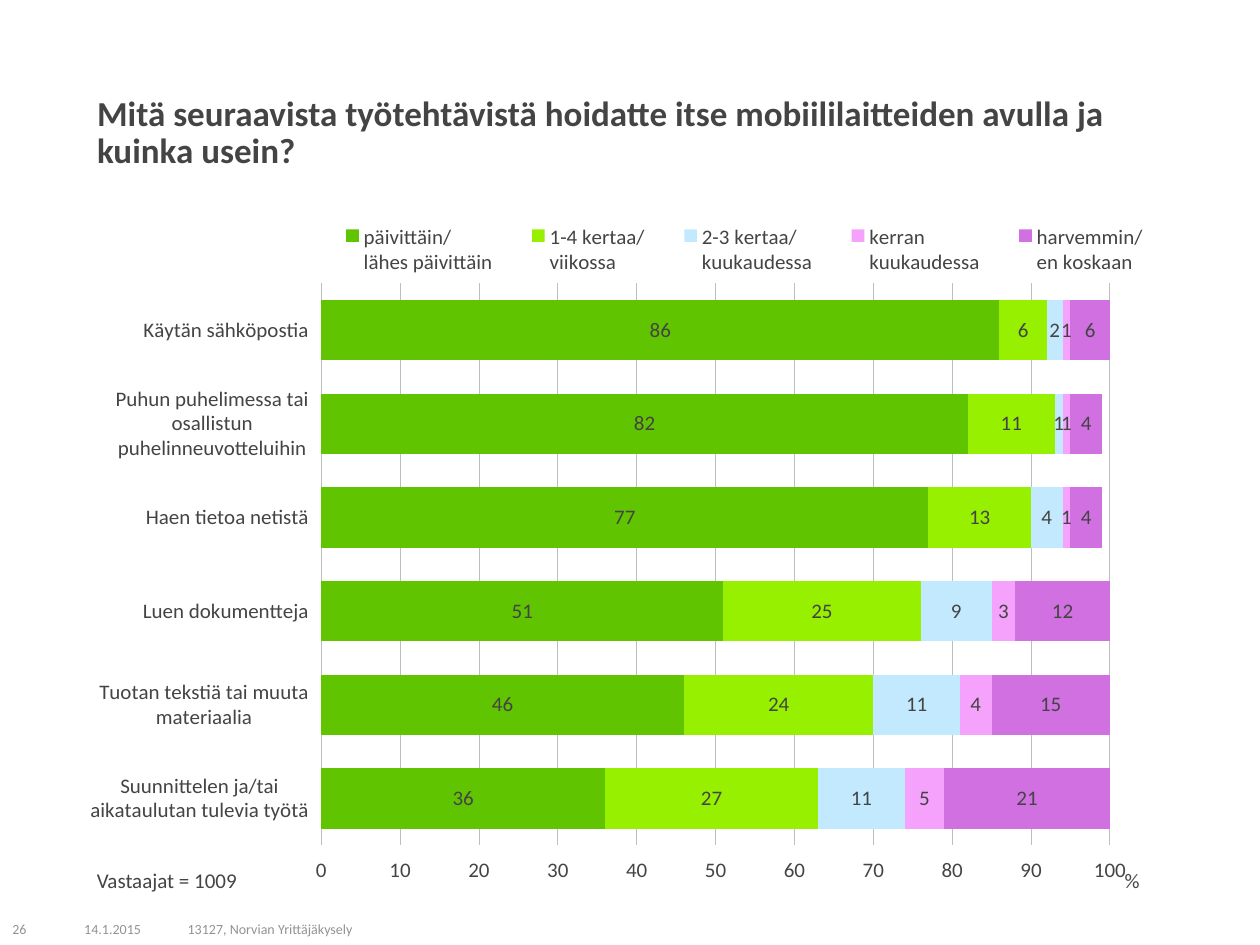
from dataclasses import dataclass

import pptx
import pptx.chart.data
import pptx.dml.color
import pptx.enum.chart
import pptx.enum.text
import pptx.oxml
import pptx.oxml.ns
import pptx.util

FONT = "Calibri"
DARK, GREY, GRID = "444444", "939393", "BCBEC0"
COLS, ROWS = 100, 75
WIDE, HIGH = pptx.util.Inches(10), pptx.util.Inches(7.5)


@dataclass
class Spot:
    """Place on the slide, in columns and rows of the grid."""
    col: float
    row: float
    cols: float
    rows: float

    def box(self) -> tuple:
        return (round(self.col * WIDE / COLS), round(self.row * HIGH / ROWS),
                round(self.cols * WIDE / COLS), round(self.rows * HIGH / ROWS))


@dataclass
class Note:
    text: str
    spot: Spot
    size: float
    hue: str
    mid: bool = False
    bold: bool = False
    gap: float = 1.0


@dataclass
class Band:
    name: str
    hue: str
    vals: tuple


TITLE = Note("Mitä seuraavista työtehtävistä hoidatte itse mobiililaitteiden "
             "avulla ja kuinka usein?",
             Spot(6.7, 7.1, 86.6, 6.3), 20, DARK, bold=True, gap=0.9)
NOTES = [
    Note("14.1.2015", Spot(5.7, 72.5, 8.2, 2.5), 8, GREY, mid=True),
    Note("13127, Norvian Yrittäjäkysely", Spot(13.9, 72.5, 33.1, 2.5), 8, GREY, mid=True),
    Note("26", Spot(0, 72.5, 4.5, 2.5), 8, GREY, mid=True),
    Note("Vastaajat = 1009", Spot(6.7, 68.6, 27.7, 2.8), 12, DARK, gap=0.9),
]
CHART = Spot(6.7, 16.6, 86.6, 54.8)
TASKS = [
    "Käytän sähköpostia",
    "Puhun puhelimessa tai osallistun puhelinneuvotteluihin",
    "Haen tietoa netistä",
    "Luen dokumentteja",
    "Tuotan tekstiä tai muuta materiaalia",
    "Suunnittelen ja/tai aikataulutan tulevia työtä",
]
BANDS = [
    Band("päivittäin/\nlähes päivittäin", "60C400", (86, 82, 77, 51, 46, 36)),
    Band("1-4 kertaa/\nviikossa", "96F000", (6, 11, 13, 25, 24, 27)),
    Band("2-3 kertaa/\nkuukaudessa", "C2E9FE", (2, 1, 4, 9, 11, 11)),
    Band("kerran\nkuukaudessa", "F5A2FD", (1, 1, 1, 3, 4, 5)),
    Band("harvemmin/\nen koskaan", "D070E1", (6, 4, 4, 12, 15, 21)),
]


def rgb(hue: str) -> pptx.dml.color.RGBColor:
    return pptx.dml.color.RGBColor.from_string(hue)


def style(font, size: float, hue: str, bold: bool = False) -> None:
    font.name, font.size, font.bold = FONT, pptx.util.Pt(size), bold
    font.color.rgb = rgb(hue)


def write(shape, note: Note) -> None:
    shape.left, shape.top, shape.width, shape.height = note.spot.box()
    frame = shape.text_frame
    frame.word_wrap = True
    frame.auto_size = pptx.enum.text.MSO_AUTO_SIZE.NONE
    anchor = pptx.enum.text.MSO_ANCHOR
    frame.vertical_anchor = anchor.MIDDLE if note.mid else anchor.TOP
    para = frame.paragraphs[0]
    para.alignment = pptx.enum.text.PP_ALIGN.LEFT
    para.line_spacing = note.gap
    run = para.add_run()
    run.text = note.text
    style(run.font, note.size, note.hue, note.bold)


def pin(node, index: int, inner: bool = False, **share: float) -> None:
    """Fix a chart part at shares of the chart's size."""
    for old in node.findall(pptx.oxml.ns.qn("c:layout")):
        node.remove(old)
    tags = '<c:layoutTarget val="inner"/>' if inner else ""
    tags += "".join(f'<c:{key}Mode val="edge"/>' for key in "xy")
    tags += "".join(f'<c:{key} val="{val}"/>' for key, val in share.items())
    node.insert(index, pptx.oxml.parse_xml(
        f'<c:layout {pptx.oxml.ns.nsdecls("c")}>'
        f'<c:manualLayout>{tags}</c:manualLayout></c:layout>'))


def set_axes(chart) -> None:
    enum = pptx.enum.chart
    cat, val = chart.category_axis, chart.value_axis
    for axis in (cat, val):
        axis.major_tick_mark = axis.minor_tick_mark = enum.XL_TICK_MARK.NONE
        axis.format.line.fill.background()
        style(axis.tick_labels.font, 12, DARK)
    cat.reverse_order = True
    cat.tick_label_position = enum.XL_TICK_LABEL_POSITION.LOW
    cat.has_major_gridlines = False

    val.tick_label_position = enum.XL_TICK_LABEL_POSITION.HIGH
    val.minimum_scale, val.maximum_scale, val.major_unit = 0, 100.01, 10
    val.tick_labels.number_format = "General"
    val.tick_labels.number_format_is_linked = False
    val.has_major_gridlines = True
    line = val.major_gridlines.format.line
    line.color.rgb, line.width = rgb(GRID), pptx.util.Pt(0.5)
    run = val.axis_title.text_frame.paragraphs[0].add_run()
    run.text = "%"
    style(run.font, 12, DARK)
    pin(val.axis_title._element, 1, x=0.95, y=0.96)


def add_bars(slide) -> None:
    enum = pptx.enum.chart
    data = pptx.chart.data.CategoryChartData(number_format="0")
    data.categories = TASKS
    for band in BANDS:
        data.add_series(band.name, band.vals)
    chart = slide.shapes.add_chart(
        enum.XL_CHART_TYPE.BAR_STACKED, *CHART.box(), data).chart
    style(chart.font, 12, "3F3F3F")
    chart.has_title = False
    set_axes(chart)

    plot = chart.plots[0]
    plot.gap_width, plot.overlap, plot.vary_by_categories = 55, 100, False
    for bar, band in zip(plot.series, BANDS):
        bar.format.fill.solid()
        bar.format.fill.fore_color.rgb = rgb(band.hue)
        tags = bar.data_labels
        tags.show_value = True
        tags.position = enum.XL_LABEL_POSITION.CENTER
        tags.number_format, tags.number_format_is_linked = "#,##0", False
        style(tags.font, 12, DARK)
    pin(chart._chartSpace.chart.plotArea, 0, True, x=0.217, y=0.109, w=0.723, h=0.826)

    chart.has_legend = True
    key = chart.legend
    key.position = enum.XL_LEGEND_POSITION.TOP
    key.include_in_layout = False
    style(key.font, 12, DARK)
    pin(key._element, 1, x=0.21, y=0.02, w=0.79, h=0.08)


def main() -> None:
    deck = pptx.Presentation()
    deck.slide_width, deck.slide_height = WIDE, HIGH
    slide = deck.slides.add_slide(deck.slide_layouts.get_by_name("Title Only"))
    add_bars(slide)
    write(slide.shapes.title, TITLE)
    for note in NOTES:
        write(slide.shapes.add_textbox(*note.spot.box()), note)
    deck.save("out.pptx")


if __name__ == "__main__":
    main()
